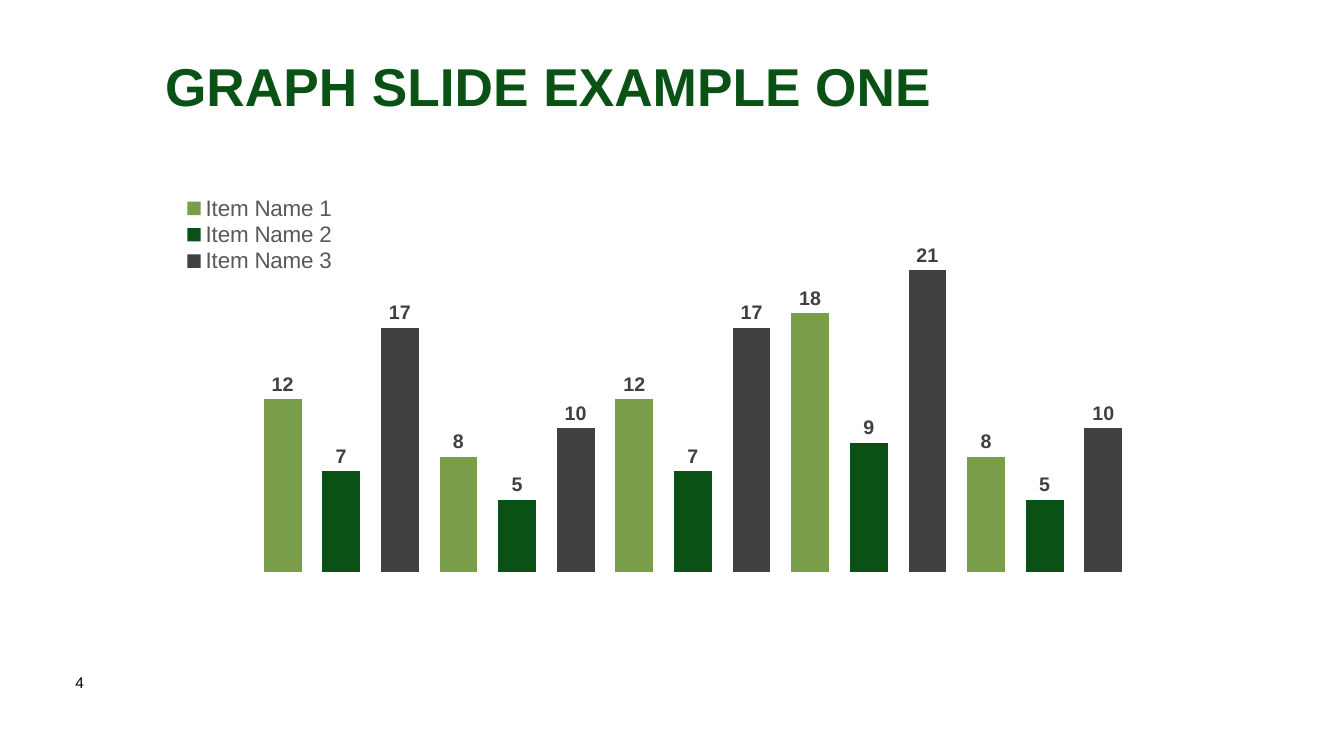
import pptx
import pptx.chart.data
import pptx.dml.color
import pptx.enum.chart
import pptx.enum.text
import pptx.oxml
import pptx.oxml.ns
import pptx.util
from pptx.util import Cm, Pt

TITLE = "GRAPH SLIDE EXAMPLE ONE"
PAGE_NUMBER = "4"
ITEM_NAMES = ["Item Name 1", "Item Name 2", "Item Name 3"]
GROUPS = [(12, 7, 17), (8, 5, 10), (12, 7, 17), (18, 9, 21), (8, 5, 10)]

THEME = {
    "font": "Arial",
    "items": ["799D49", "095115", "404041"],
    "title": "095115",
    "label": "404040",
    "legend": "595959",
    "black": "000000",
    "title_size": 38,
    "legend_size": 16,
    "label_size": 14,
    "page_size": 11,
    "chart_size": 10,
}
TITLE_BOX = (3.91, 1.17, 24.99, 1.98)
PAGE_BOX = (1.65, 16.84, 1.47, 1.37)
CHART_BOX = (3.94, 4.14, 26.01, 10.77)
PLOT_AREA = (0.094, 0.113, 0.852, 0.841)
LEGEND_AREA = (0.02, 0.07, 0.16, 0.19)
LABEL_LIFT = -0.07


def style(font, size, color, bold=False):
    font.name = THEME["font"]
    font.size = Pt(size)
    font.bold = bold
    font.color.rgb = pptx.dml.color.RGBColor.from_string(color)


def add_text(s, box, text, size, color, bold, anchor):
    tf = s.shapes.add_textbox(*map(Cm, box)).text_frame
    tf.word_wrap = True
    tf.vertical_anchor = anchor
    r = tf.paragraphs[0].add_run()
    r.text = text
    style(r.font, size, color, bold)


def layout_xml(**settings):
    parts = "".join(f'<c:{tag} val="{val}"/>' for tag, val in settings.items())
    return pptx.oxml.parse_xml(
        f'<c:layout {pptx.oxml.ns.nsdecls("c")}>'
        f"<c:manualLayout>{parts}</c:manualLayout></c:layout>"
    )


def area_xml(area, **target):
    x, y, w, h = area
    return layout_xml(**target, xMode="edge", yMode="edge", x=x, y=y, w=w, h=h)


def place(parent, index, layout):
    for old in parent.findall(pptx.oxml.ns.qn("c:layout")):
        parent.remove(old)
    parent.insert(index, layout)


def add_chart(s):
    width = len(ITEM_NAMES)
    count = width * len(GROUPS)
    data = pptx.chart.data.CategoryChartData()
    data.categories = [str(n + 1) for n in range(count)]
    for item in reversed(range(width)):
        values = [GROUPS[n // width][item] if n % width == item else None for n in range(count)]
        data.add_series(ITEM_NAMES[item], values)

    kind = pptx.enum.chart.XL_CHART_TYPE.COLUMN_STACKED
    chart = s.shapes.add_chart(kind, *map(Cm, CHART_BOX), data).chart
    style(chart.font, THEME["chart_size"], THEME["black"])
    chart.has_title = False
    chart.category_axis.visible = False
    axis = chart.value_axis
    axis.visible = False
    axis.has_major_gridlines = False
    axis.minimum_scale, axis.maximum_scale = 0, 25

    chart.has_legend = True
    legend = chart.legend
    legend.position = pptx.enum.chart.XL_LEGEND_POSITION.RIGHT
    legend.include_in_layout = False
    style(legend.font, THEME["legend_size"], THEME["legend"])
    place(legend._element, 1, area_xml(LEGEND_AREA))

    plot = chart.plots[0]
    plot.gap_width, plot.overlap = 55, 100
    plot.vary_by_categories = False
    place(chart._chartSpace.chart.plotArea, 0, area_xml(PLOT_AREA, layoutTarget="inner"))

    for series, item in zip(plot.series, reversed(range(width))):
        fill = series.format.fill
        fill.solid()
        fill.fore_color.rgb = pptx.dml.color.RGBColor.from_string(THEME["items"][item])
        labels = series.data_labels
        labels.show_value = True
        labels.position = pptx.enum.chart.XL_LABEL_POSITION.INSIDE_END
        style(labels.font, THEME["label_size"], THEME["label"], True)
        for n in range(item, count, width):
            label = series.points[n].data_label
            label.position = pptx.enum.chart.XL_LABEL_POSITION.INSIDE_END
            style(label.font, THEME["label_size"], THEME["label"], True)
            element = labels._element.xpath(f'c:dLbl[c:idx/@val="{n}"]')[0]
            place(element, 1, layout_xml(x=0, y=LABEL_LIFT))


def main():
    prs = pptx.Presentation()
    prs.slide_width, prs.slide_height = Cm(33.87), Cm(19.05)
    s = prs.slides.add_slide(prs.slide_layouts[6])
    anchors = pptx.enum.text.MSO_ANCHOR
    add_text(s, PAGE_BOX, PAGE_NUMBER, THEME["page_size"], THEME["black"], False, anchors.TOP)
    add_chart(s)
    add_text(s, TITLE_BOX, TITLE, THEME["title_size"], THEME["title"], True, anchors.MIDDLE)
    prs.save("out.pptx")


if __name__ == "__main__":
    main()
